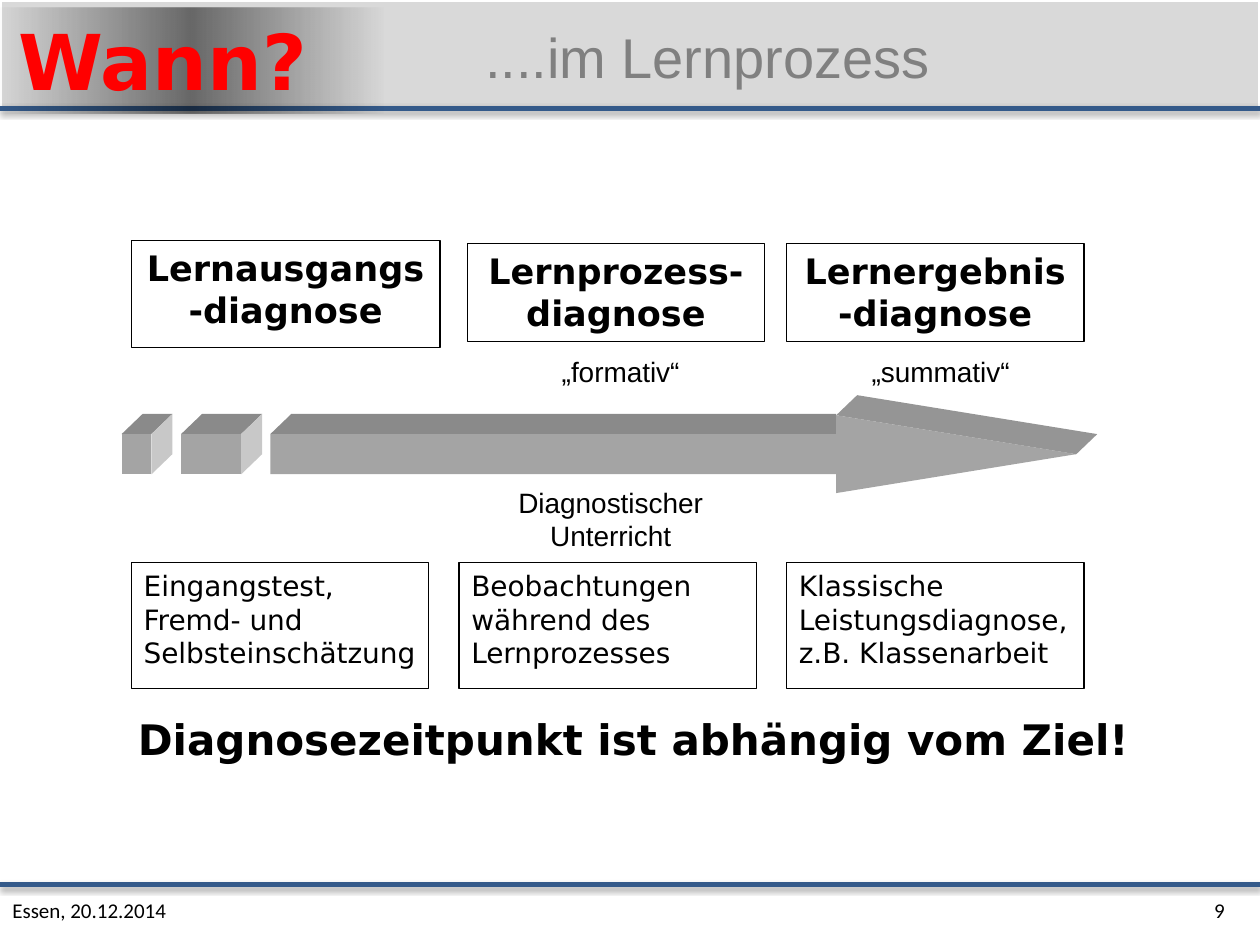
from dataclasses import dataclass

from lxml.etree import SubElement
from pptx import Presentation
from pptx.dml.color import RGBColor
from pptx.enum.shapes import MSO_CONNECTOR, MSO_SHAPE
from pptx.enum.text import MSO_ANCHOR, PP_ALIGN
from pptx.oxml import parse_xml
from pptx.oxml.ns import nsdecls, qn
from pptx.util import Pt


@dataclass(frozen=True)
class Theme:
    sans: str = "Arial"
    wide: str = "DejaVu Sans"
    small: str = "Calibri"
    black: str = "000000"
    white: str = "FFFFFF"
    band: str = "D9D9D9"
    rule: str = "345A8A"
    title: str = "808080"
    red: str = "FF0000"
    front: str = "A4A4A4"
    top: str = "8A8A8A"
    slope: str = "959595"
    side: str = "C8C8C8"
    foot_size: int = 12
    text_size: int = 16
    head_size: int = 20
    claim_size: int = 24
    title_size: int = 32
    tag_size: int = 44


T = Theme()
LEFT, MID, RIGHT = PP_ALIGN.LEFT, PP_ALIGN.CENTER, PP_ALIGN.RIGHT


def rgb(code):
    return RGBColor.from_string(code)


def place(shape, box):
    shape.left, shape.top, shape.width, shape.height = (Pt(v) for v in box)


def write(shape, text, font, size, align=MID, color=T.black, bold=False,
          anchor=MSO_ANCHOR.TOP):
    frame = shape.text_frame
    frame.word_wrap = True
    frame.vertical_anchor = anchor
    frame.text = text
    par = frame.paragraphs[0]
    par.alignment = align
    par.font.name = font
    par.font.size = Pt(size)
    par.font.bold = bold
    par.font.color.rgb = rgb(color)


def label(slide, box, text, font, size, **style):
    shape = slide.shapes.add_textbox(*(Pt(v) for v in box))
    write(shape, text, font, size, **style)


def panel(slide, box):
    shape = slide.shapes.add_shape(MSO_SHAPE.RECTANGLE, *(Pt(v) for v in box))
    shape.shadow.inherit = False
    return shape


def rule(slide, x, y, width):
    line = slide.shapes.add_connector(
        MSO_CONNECTOR.STRAIGHT, Pt(x), Pt(y), Pt(x + width), Pt(y))
    line.line.color.rgb = rgb(T.rule)
    line.line.width = Pt(3)
    props = line.element.find(qn("p:spPr"))
    glow = SubElement(props, qn("a:effectLst"))
    shade = SubElement(glow, qn("a:outerShdw"), blurRad=str(Pt(3.1)),
                       dist=str(Pt(1.6)), dir="5400000", rotWithShape="0")
    tint = SubElement(shade, qn("a:srgbClr"), val=T.black)
    SubElement(tint, qn("a:alpha"), val="38000")


def fade(shape):
    stops = "".join(
        f'<a:gs pos="{pos}000"><a:srgbClr val="{T.black}">'
        f'<a:alpha val="{alpha}000"/></a:srgbClr></a:gs>'
        for pos, alpha in ((0, 0), (50, 52), (100, 0)))
    grad = parse_xml(f'<a:gradFill {nsdecls("a")} rotWithShape="1">'
                     f'<a:gsLst>{stops}</a:gsLst><a:lin ang="0"/></a:gradFill>')
    shape.element.spPr.find(qn("a:prstGeom")).addnext(grad)


def header(slide, box):
    x, y, width, height = box
    band = panel(slide, box)
    band.fill.solid()
    band.fill.fore_color.rgb = rgb(T.band)
    band.line.color.rgb = rgb(T.white)
    band.line.width = Pt(2)
    rule(slide, x, y + height - 0.7, width)
    title = slide.shapes.title
    title.element.getparent().append(title.element)
    place(title, (x + 164.5, y + 2, 480, 60))
    write(title, "....im Lernprozess", T.sans, T.title_size,
          color=T.title, anchor=MSO_ANCHOR.MIDDLE)
    tag = panel(slide, (x - 1.5, y + 4.3, 221, 60.5))
    fade(tag)
    tag.line.fill.background()
    write(tag, "Wann?", T.wide, T.tag_size, color=T.red, bold=True)
    tag.text_frame.margin_right = Pt(39)


def footer(slide, box):
    x, y, width, height = box
    rule(slide, x, y, width)
    for text, align, span in (("Essen, 20.12.2014", LEFT, width),
                              ("9", RIGHT, width - 13)):
        label(slide, (x, y, span, height), text, T.small, T.foot_size,
              align=align, anchor=MSO_ANCHOR.MIDDLE)


def card(slide, box, text, size, **style):
    shape = panel(slide, box)
    shape.fill.background()
    shape.line.color.rgb = rgb(T.black)
    shape.line.width = Pt(0.75)
    write(shape, text, T.wide, size, **style)


def face(slide, points, color):
    first, *rest = [(Pt(x), Pt(y)) for x, y in points]
    pen = slide.shapes.build_freeform(*first)
    pen.add_line_segments(rest, close=True)
    shape = pen.convert_to_shape()
    shape.shadow.inherit = False
    shape.fill.solid()
    shape.fill.fore_color.rgb = rgb(color)
    shape.line.fill.background()


def arrow(slide, box):
    x, y, width, height = box
    dx, dy = 12, -11.5
    mid = y + height / 2
    up, low = mid - 11.5, mid + 11.5
    neck, tip = x + 408.3, x + width

    def shift(point):
        return point[0] + dx, point[1] + dy

    def sweep(start, end, color):
        face(slide, (start, shift(start), shift(end), end), color)

    for left, right in ((0, 17), (34, 68.3)):
        a, b = x + left, x + right
        sweep((a, up), (b, up), T.top)
        sweep((b, up), (b, low), T.side)
        face(slide, ((a, up), (b, up), (b, low), (a, low)), T.front)
    tail = x + 85
    face(slide, ((tail, up), shift((tail, up)), (neck, up + dy), (neck, up)),
         T.top)
    sweep((neck, y), (tip, mid), T.slope)
    face(slide, ((tail, up), (neck, up), (neck, y), (tip, mid),
                 (neck, y + height), (neck, low), (tail, low)), T.front)


def process(slide, box):
    x, y, width, height = box
    heads = (((0, 0, 176.4, 61), "Lernausgangs-diagnose"),
             ((192, 1.7, 170, 56), "Lernprozess-diagnose"),
             ((374.4, 1.7, 170, 56), "Lernergebnis-diagnose"))
    for (dx, dy, w, h), text in heads:
        card(slide, (x + dx, y + dy, w, h), text, T.head_size, bold=True)
    arrow(slide, (x - 5.5, y + 99.8, 545.5, 44.5))
    tests = ("Eingangstest, Fremd- und Selbsteinschätzung",
             "Beobachtungen während des Lernprozesses",
             "Klassische Leistungsdiagnose, z.B. Klassenarbeit")
    for i, text in enumerate(tests):
        card(slide, (x + 187.2 * i, y + 184, 170, 72), text, T.text_size,
             align=LEFT)
    notes = ((211.7, 61.3, 27, "„formativ“"),
             (394.6, 61.3, 27, "„summativ“"),
             (206, 136.3, 46, "Diagnostischer Unterricht"))
    for dx, dy, h, text in notes:
        label(slide, (x + dx, y + dy, 136, h), text, T.sans, T.text_size)
    label(slide, (x - 5, y + height - 36, width, 36),
          "Diagnosezeitpunkt ist abhängig vom Ziel!",
          T.wide, T.claim_size, bold=True)


def main():
    deck = Presentation()
    deck.slide_width, deck.slide_height = Pt(720), Pt(540)
    slide = deck.slides.add_slide(deck.slide_layouts[5])
    header(slide, (0, 0, 720, 62.6))
    process(slide, (75, 137.5, 584, 302.5))
    footer(slide, (0, 505.4, 720, 29))
    deck.save("out.pptx")


if __name__ == "__main__":
    main()
